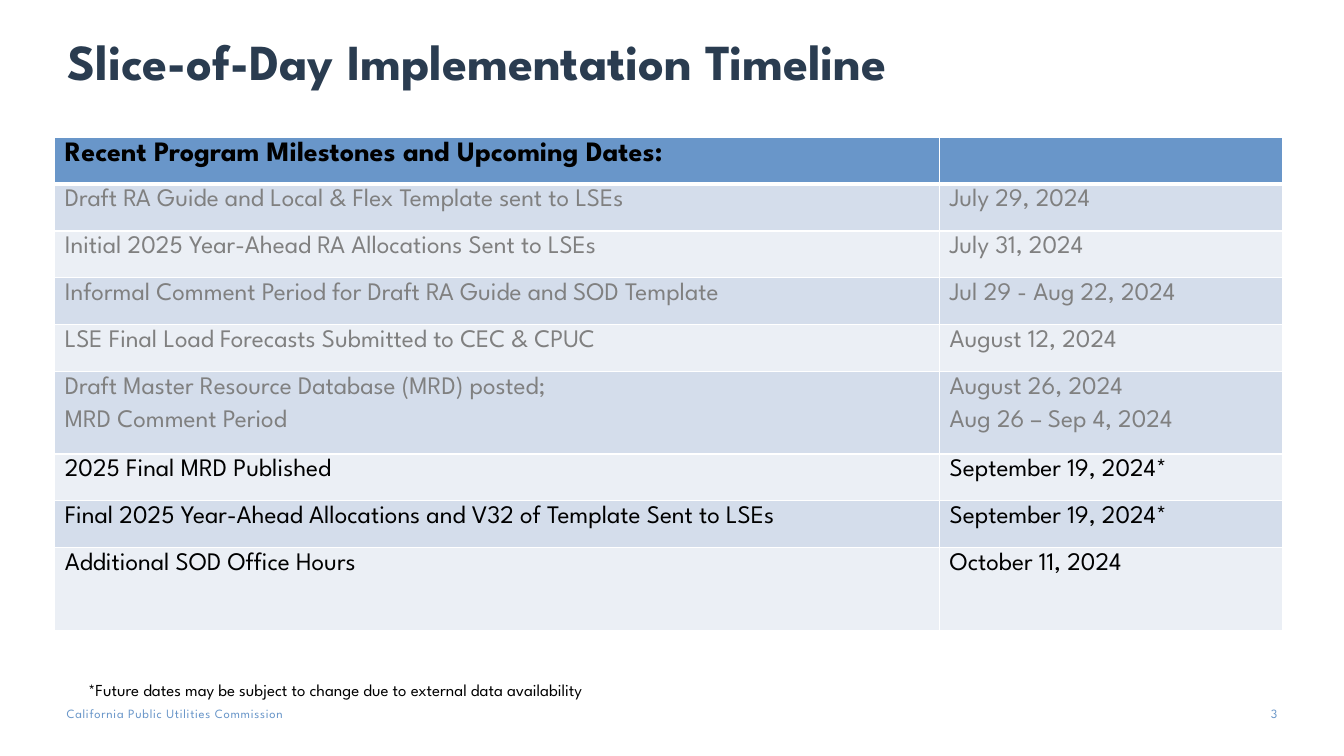
from lxml import etree
from pptx import Presentation
from pptx.dml.color import RGBColor
from pptx.enum.text import MSO_ANCHOR, PP_ALIGN
from pptx.oxml.ns import qn
from pptx.util import Cm, Pt

FONT = "League Spartan"
NAVY = RGBColor(0x2A, 0x3C, 0x50)
BLUE = RGBColor(0x69, 0x96, 0xC9)
BAND_DARK = RGBColor(0xD4, 0xDD, 0xEB)
BAND_LIGHT = RGBColor(0xEB, 0xEF, 0xF5)
GRAY = RGBColor(0x80, 0x80, 0x80)
BLACK = RGBColor(0, 0, 0)
WHITE = RGBColor(0xFF, 0xFF, 0xFF)

HEADER = ("Recent Program Milestones and Upcoming Dates:", "")
PAST = [
    ("Draft RA Guide and Local & Flex Template sent to LSEs", "July 29, 2024"),
    ("Initial 2025 Year-Ahead RA Allocations Sent to LSEs", "July 31, 2024"),
    ("Informal Comment Period for Draft RA Guide and SOD Template", "Jul 29 - Aug 22, 2024"),
    ("LSE Final Load Forecasts Submitted to CEC & CPUC", "August 12, 2024"),
    ("Draft Master Resource Database (MRD) posted;\nMRD Comment Period",
     "August 26, 2024\nAug 26 – Sep 4, 2024"),
]
UPCOMING = [
    ("2025 Final MRD Published", "September 19, 2024*"),
    ("Final 2025 Year-Ahead Allocations and V32 of Template Sent to LSEs", "September 19, 2024*"),
    ("Additional SOD Office Hours", "October 11, 2024"),
]
COLUMN_WIDTHS = (Cm(22.3), Cm(8.64))
ROW_HEIGHT, TALL_ROW_HEIGHT = Cm(1.18), Cm(2.08)
TALL_ROWS = (5, 8)


def place(sp, left, top, width, height):
    sp.left, sp.top, sp.width, sp.height = Cm(left), Cm(top), Cm(width), Cm(height)


def add_run(p, text, size, color, bold=False, spacing=0):
    r = p.add_run()
    r.text = text
    r.font.name = FONT
    r.font.size = Pt(size)
    r.font.bold = bold
    r.font.color.rgb = color
    if spacing:
        r.font._element.set("spc", str(spacing))


def set_title(s, text):
    sp = s.shapes.title
    place(sp, 1.7, 1.02, 29.41, 1.4)
    tf = sp.text_frame
    tf.word_wrap = True
    tf.vertical_anchor = MSO_ANCHOR.BOTTOM
    tf.margin_left = 0
    p = tf.paragraphs[0]
    p.alignment = PP_ALIGN.LEFT
    add_run(p, text, 36, NAVY, bold=True)


def add_text(s, box, text, size, color, align=PP_ALIGN.LEFT, inset=True, spacing=0):
    tf = s.shapes.add_textbox(*map(Cm, box)).text_frame
    tf.word_wrap = True
    if not inset:
        tf.margin_left = tf.margin_right = tf.margin_top = tf.margin_bottom = 0
    p = tf.paragraphs[0]
    p.alignment = align
    add_run(p, text, size, color, spacing=spacing)


def set_borders(cell, bottom):
    tcPr = cell._tc.get_or_add_tcPr()
    for side, width in (("L", 1), ("R", 1), ("T", 1), ("B", bottom)):
        ln = etree.SubElement(tcPr, qn(f"a:ln{side}"), w=str(Pt(width)))
        fill = etree.SubElement(ln, qn("a:solidFill"))
        etree.SubElement(fill, qn("a:srgbClr"), val=str(WHITE))


def fill_cell(cell, text, size, color, fill, bold=False, bottom=1):
    set_borders(cell, bottom)
    cell.fill.solid()
    cell.fill.fore_color.rgb = fill
    tf = cell.text_frame
    for i, line in enumerate(text.split("\n")):
        p = tf.add_paragraph() if i else tf.paragraphs[0]
        if i:
            p.space_before = Pt(7)
        if line:
            add_run(p, line, size, color, bold)


def add_milestones(s):
    rows = [HEADER] + PAST + UPCOMING
    table = s.shapes.add_table(len(rows), 2, Cm(1.38), Cm(3.46),
                               sum(COLUMN_WIDTHS), ROW_HEIGHT * len(rows)).table
    for column, width in zip(table.columns, COLUMN_WIDTHS):
        column.width = width
    for i, texts in enumerate(rows):
        table.rows[i].height = TALL_ROW_HEIGHT if i in TALL_ROWS else ROW_HEIGHT
        for j, text in enumerate(texts):
            cell = table.cell(i, j)
            if i == 0:
                fill_cell(cell, text, 20, BLACK, BLUE, bold=True, bottom=3)
            else:
                color = GRAY if i <= len(PAST) else BLACK
                fill_cell(cell, text, 18, color, BAND_DARK if i % 2 else BAND_LIGHT)


def main():
    prs = Presentation()
    prs.slide_width, prs.slide_height = Cm(33.87), Cm(19.05)
    s = prs.slides.add_slide(prs.slide_layouts[5])
    set_title(s, "Slice-of-Day Implementation Timeline")
    add_milestones(s)
    add_text(s, (1.98, 17, 18.52, 0.76),
             "*Future dates may be subject to change due to external data availability", 12, BLACK)
    add_text(s, (1.68, 17.78, 8.15, 0.38), "California Public Utilities Commission", 9, BLUE,
             inset=False, spacing=50)
    add_text(s, (31.12, 17.78, 1.07, 0.51), "3", 9, BLUE, PP_ALIGN.RIGHT, inset=False)
    prs.save("out.pptx")


if __name__ == "__main__":
    main()
